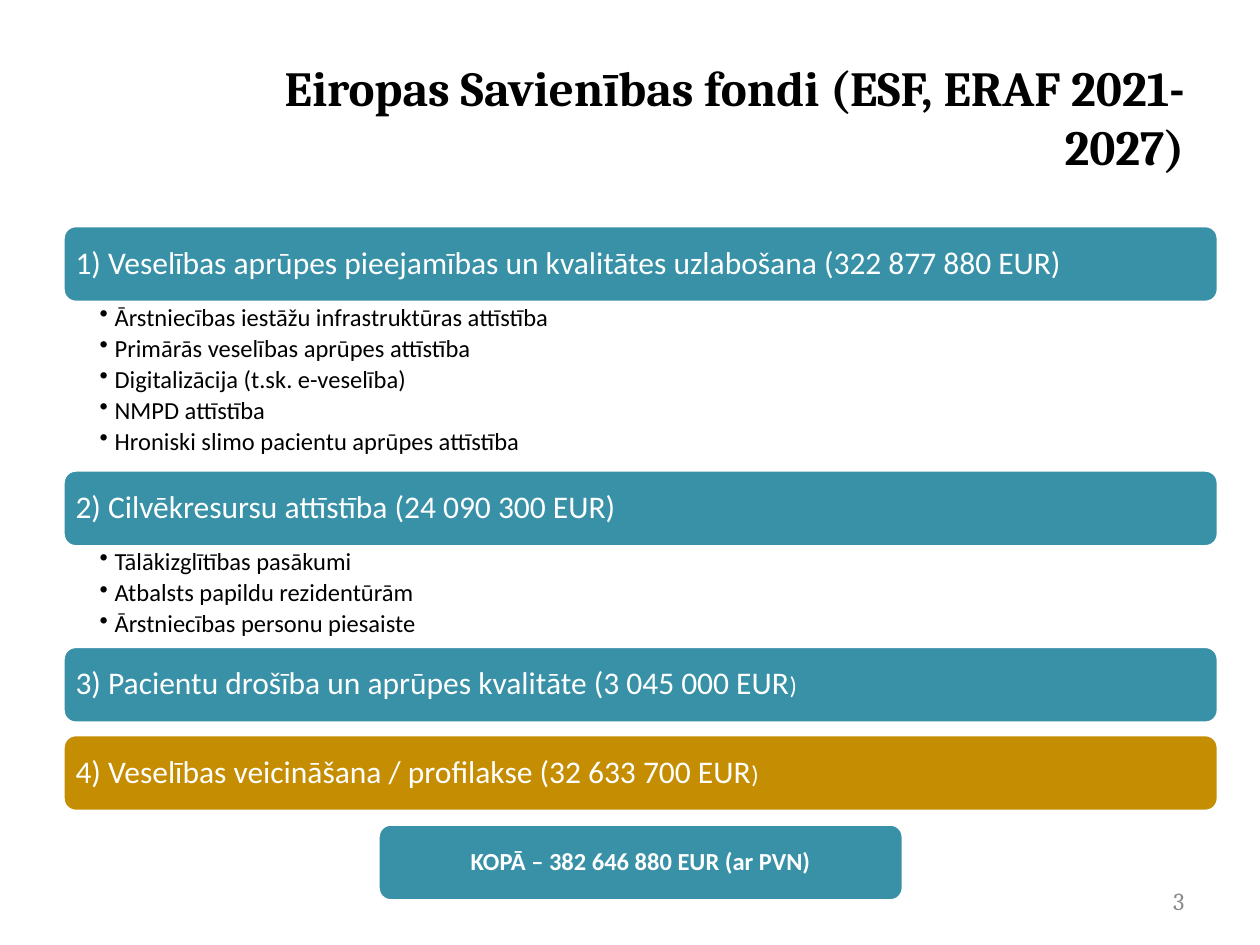
from lxml import etree
from pptx import Presentation
from pptx import util as u
from pptx.dml.color import RGBColor
from pptx.enum import shapes, text
from pptx.oxml.ns import qn

SCALE = 9144
HUES = {"teal": "3891A7", "gold": "C58D01", "white": "FFFFFF",
        "black": "000000", "gray": "8C8C8C"}
HEAD = {"name": "Calibri", "size": u.Pt(18), "bold": False}
ITEM = {"name": "Calibri", "size": u.Pt(14), "bold": False}
TOTAL = {"name": "Calibri", "size": u.Pt(14), "bold": True}
TITLE = {"name": "Cambria", "size": u.Pt(28), "bold": True}
PAGE = {"name": "Cambria", "size": u.Pt(14), "bold": False}
LEFT, WIDE, BAR, GAP = 50, 917, 61, 9
GOALS = [
    ("1) Veselības aprūpes pieejamības un kvalitātes uzlabošana (322 877 880 EUR)", "", "teal", 133,
     ["Ārstniecības iestāžu infrastruktūras attīstība",
      "Primārās veselības aprūpes attīstība",
      "Digitalizācija (t.sk. e-veselība)",
      "NMPD attīstība",
      "Hroniski slimo pacientu aprūpes attīstība"]),
    ("2) Cilvēkresursu attīstība (24 090 300 EUR)", "", "teal", 79,
     ["Tālākizglītības pasākumi",
      "Atbalsts papildu rezidentūrām",
      "Ārstniecības personu piesaiste"]),
    ("3) Pacientu drošība un aprūpes kvalitāte (3 045 000 EUR", ")", "teal", GAP, []),
    ("4) Veselības veicināšana / profilakse (32 633 700 EUR", ")", "gold", GAP, []),
]


def px(*nums):
    return [u.Emu(num * SCALE) for num in nums]


def color(hue):
    return RGBColor.from_string(HUES[hue])


def setup(frame, pads, anchor):
    sides = ("margin_left", "margin_top", "margin_right", "margin_bottom")
    form = dict(zip(sides, px(*pads)), word_wrap=True, vertical_anchor=anchor,
                auto_size=text.MSO_AUTO_SIZE.NONE)
    for key, value in form.items():
        setattr(frame, key, value)


def write(para, words, form, hue, align=text.PP_ALIGN.LEFT):
    para.alignment = align
    run = para.add_run()
    run.text = words
    for key, value in form.items():
        setattr(run.font, key, value)
    run.font.color.rgb = color(hue)


def add_bar(slide, box, hue, parts, pad=7, align=text.PP_ALIGN.LEFT):
    bar = slide.shapes.add_shape(shapes.MSO_SHAPE.ROUNDED_RECTANGLE, *px(*box))
    bar.shadow.inherit = False
    bar.fill.solid()
    bar.fill.fore_color.rgb = color(hue)
    bar.line.color.rgb = color("white")
    bar.line.width = u.Pt(2)
    setup(bar.text_frame, [pad] * 4, text.MSO_ANCHOR.MIDDLE)
    para = bar.text_frame.paragraphs[0]
    para.line_spacing = 0.9
    for words, form in parts:
        write(para, words, form, "white", align)


def add_list(slide, box, items):
    frame = slide.shapes.add_textbox(*px(*box)).text_frame
    setup(frame, (29, 2, 11, 2), text.MSO_ANCHOR.TOP)
    for rank, item in enumerate(items):
        para = frame.add_paragraph() if rank else frame.paragraphs[0]
        props = para._p.get_or_add_pPr()
        inset = px(12)[0]
        props.set("marL", str(inset))
        props.set("indent", str(-inset))
        etree.SubElement(props, qn("a:buChar")).set("char", "•")
        para.level = 1
        para.line_spacing = 0.9
        para.space_after = u.Pt(2.6)
        write(para, item, ITEM, "black")


def add_goals(slide, box):
    left, top, wide, _ = box
    for words, tail, hue, room, items in GOALS:
        parts = [(words, HEAD)] + ([(tail, ITEM)] if tail else [])
        add_bar(slide, (left, top, wide, BAR), hue, parts)
        top += BAR
        if items:
            add_list(slide, (left, top, wide, room), items)
        top += room


def add_title(slide, box):
    title = slide.shapes.title
    title.left, title.top, title.width, title.height = px(*box)
    setup(title.text_frame, (10, 5, 10, 5), text.MSO_ANCHOR.MIDDLE)
    write(title.text_frame.paragraphs[0],
          "Eiropas Savienības fondi (ESF, ERAF 2021-2027)",
          TITLE, "black", text.PP_ALIGN.RIGHT)


def add_page(slide, box):
    frame = slide.shapes.add_textbox(*px(*box)).text_frame
    setup(frame, (10, 5, 10, 5), text.MSO_ANCHOR.MIDDLE)
    write(frame.paragraphs[0], "3", PAGE, "gray", text.PP_ALIGN.RIGHT)


def main():
    deck = Presentation()
    deck.slide_width, deck.slide_height = px(1000, 750)
    slide = deck.slides.add_slide(deck.slide_layouts[5])
    add_title(slide, (200, 30, 750, 125))
    add_page(slide, (717, 695, 233, 40))
    add_goals(slide, (LEFT, 179, WIDE, 465))
    add_bar(slide, (300, 654, 417, BAR), "teal",
            [("KOPĀ – 382 646 880 EUR (ar PVN)", TOTAL)], 6, text.PP_ALIGN.CENTER)
    deck.save("out.pptx")


if __name__ == "__main__":
    main()
